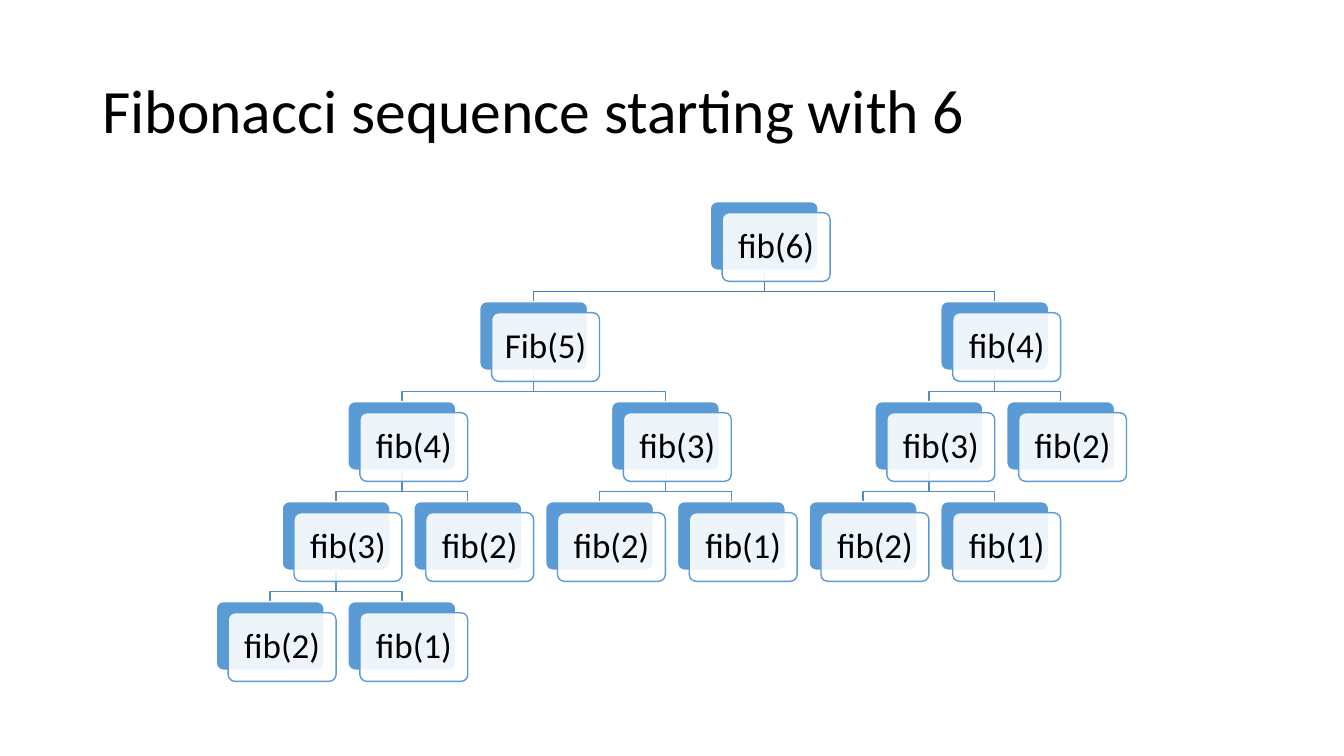
from lxml.etree import SubElement
from pptx import Presentation
from pptx.dml.color import RGBColor
from pptx.enum.shapes import MSO_SHAPE
from pptx.enum.text import MSO_ANCHOR, PP_ALIGN
from pptx.oxml.ns import qn
from pptx.util import Cm, Pt

BLUE, WHITE, BLACK = "5B9BD5", "FFFFFF", "000000"
LEFT, TOP = 6.81, 5.08          # centre of column 0, top of level 0
COL, ROW = 1.66, 2.52           # grid steps
BOX_W, BOX_H = 2.72, 1.73
SHIFT_X, SHIFT_Y = 0.3, 0.28    # front card against back card
DROP = 0.53                     # from a box down to the branch line

# label, level, column, index of parent
calls = [
    ("fib(6)", 0, 7.5, None),
    ("Fib(5)", 1, 4, 0),
    ("fib(4)", 2, 2, 1),
    ("fib(3)", 3, 1, 2),
    ("fib(2)", 4, 0, 3),
    ("fib(1)", 4, 2, 3),
    ("fib(2)", 3, 3, 2),
    ("fib(3)", 2, 6, 1),
    ("fib(2)", 3, 5, 7),
    ("fib(1)", 3, 7, 7),
    ("fib(4)", 1, 11, 0),
    ("fib(3)", 2, 10, 10),
    ("fib(2)", 3, 9, 11),
    ("fib(1)", 3, 11, 11),
    ("fib(2)", 2, 12, 10),
]


def rgb(color):
    return RGBColor.from_string(color)


def write(tf, text, size, align):
    tf.vertical_anchor = MSO_ANCHOR.MIDDLE
    p = tf.paragraphs[0]
    p.alignment = align
    p.line_spacing = 0.9
    r = p.add_run()
    r.text = text
    r.font.name = "Calibri"
    r.font.size = Pt(size)
    r.font.color.rgb = rgb(BLACK)


prs = Presentation()
prs.slide_width, prs.slide_height = Cm(33.87), Cm(19.05)
s = prs.slides.add_slide(prs.slide_layouts[6])

title = s.shapes.add_textbox(Cm(2.33), Cm(1.01), Cm(29.21), Cm(3.68))
title.text_frame.word_wrap = True
write(title.text_frame, "Fibonacci sequence starting with 6", 44, PP_ALIGN.LEFT)

# Branches lie behind the boxes
for label, level, col, parent in calls:
    if parent is None:
        continue
    parent_level, parent_col = calls[parent][1:3]
    x1, x2 = Cm(LEFT + parent_col * COL), Cm(LEFT + col * COL)
    y1 = Cm(TOP + parent_level * ROW + BOX_H)
    y2 = Cm(TOP + level * ROW)
    bend = y1 + Cm(DROP)
    path = s.shapes.build_freeform(x1, y1)
    path.add_line_segments([(x1, bend), (x2, bend), (x2, y2)], close=False)
    branch = path.convert_to_shape()
    branch.shadow.inherit = False
    branch.fill.background()
    branch.line.color.rgb = rgb("497CAB" if parent == 0 else "538DC1")
    branch.line.width = Pt(1)

# Each call is a blue back card with a translucent white card in front
for label, level, col, parent in calls:
    x = LEFT + col * COL - BOX_W / 2
    y = TOP + level * ROW
    for dx, dy, fill, line in [(0, 0, BLUE, WHITE), (SHIFT_X, SHIFT_Y, WHITE, BLUE)]:
        card = s.shapes.add_shape(MSO_SHAPE.ROUNDED_RECTANGLE, Cm(x + dx), Cm(y + dy),
                                  Cm(BOX_W), Cm(BOX_H))
        card.adjustments[0] = 0.1
        card.shadow.inherit = False
        card.fill.solid()
        card.fill.fore_color.rgb = rgb(fill)
        card.line.color.rgb = rgb(line)
        card.line.width = Pt(1)
    color = card.fill._xPr.find(qn("a:solidFill"))[0]
    SubElement(color, qn("a:alpha"), val="90000")
    tf = card.text_frame
    tf.word_wrap = False
    tf.margin_left = tf.margin_right = tf.margin_top = tf.margin_bottom = Cm(0.25)
    write(tf, label, 25, PP_ALIGN.CENTER)

prs.save("out.pptx")
